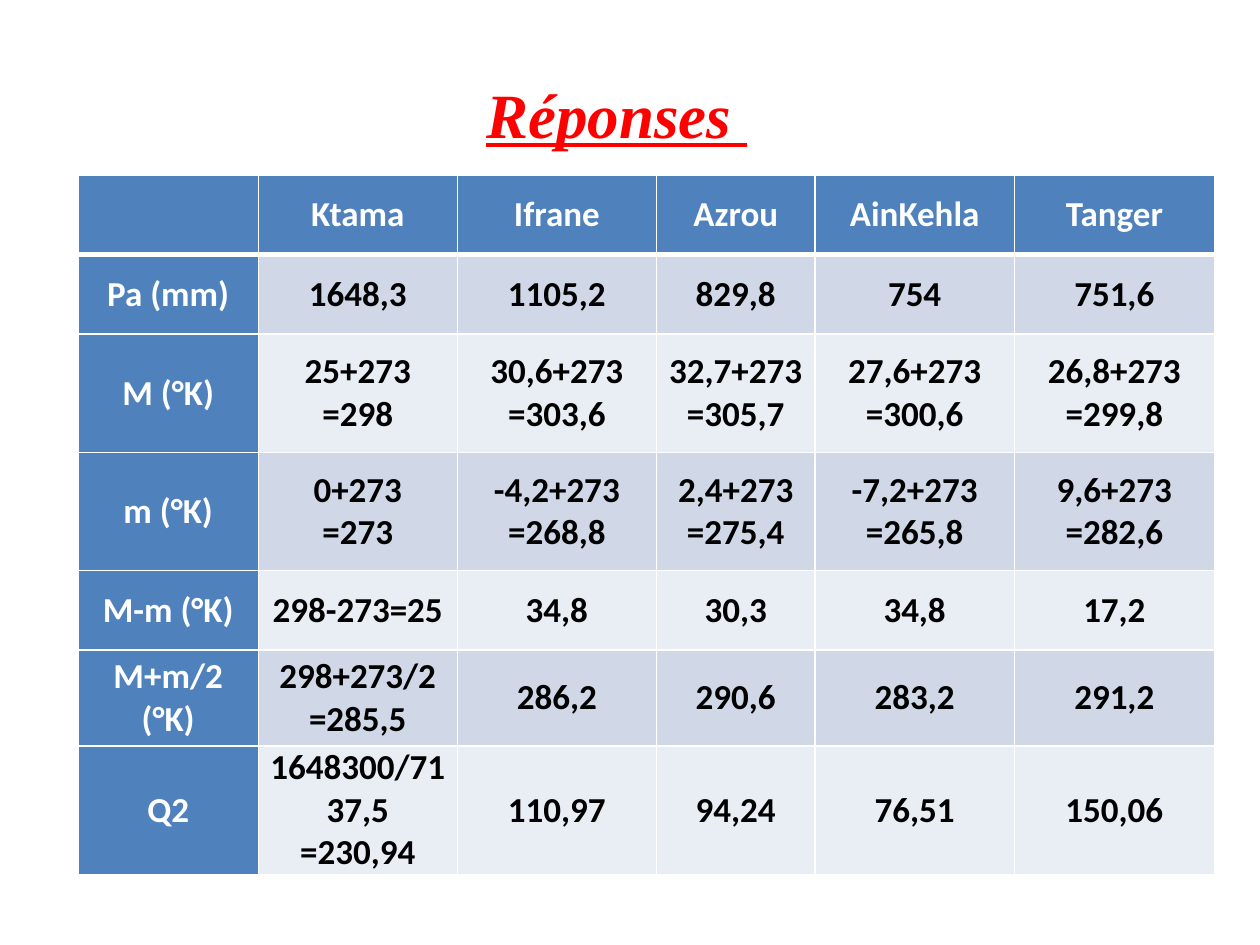
"""Build the slide of answers: a title above a table of climate values."""
from lxml import etree
from pptx import Presentation
from pptx.dml.color import RGBColor
from pptx.enum.text import MSO_ANCHOR, MSO_AUTO_SIZE, PP_ALIGN
from pptx.oxml.ns import qn
from pptx.util import Inches, Pt

MIDDLE = MSO_ANCHOR.MIDDLE
CENTER = PP_ALIGN.CENTER
GROW = MSO_AUTO_SIZE.SHAPE_TO_FIT_TEXT

COLORS = {
    "head": "4F81BD", "odd": "D0D8E8", "even": "E9EDF4",
    "light": "FFFFFF", "dark": "000000", "title": "FF0000",
}
TITLE = "Réponses "
ROWS = [
    ["", "Ktama", "Ifrane", "Azrou", "AinKehla", "Tanger"],
    ["Pa (mm)", "1648,3", "1105,2", "829,8", "754", "751,6"],
    ["M (°K)", "25+273\n=298", "30,6+273\n=303,6", "32,7+273\n=305,7",
     "27,6+273\n=300,6", "26,8+273\n=299,8"],
    ["m (°K)", "0+273\n=273", "-4,2+273\n=268,8", "2,4+273\n=275,4",
     "-7,2+273\n=265,8", "9,6+273\n=282,6"],
    ["M-m (°K)", "298-273=25", "34,8", "30,3", "34,8", "17,2"],
    ["M+m/2 (°K)", "298+273/2\n=285,5", "286,2", "290,6", "283,2", "291,2"],
    ["Q2", "1648300/7137,5\n=230,94", "110,97", "94,24", "76,51", "150,06"],
]
WIDTHS = [1.43, 1.58, 1.58, 1.26, 1.58, 1.59]
HEIGHTS = [0.63, 0.63, 0.94, 0.94, 0.63, 0.76, 0.76]


def color(name):
    return RGBColor.from_string(COLORS[name])


def style(font, face, size, name):
    font.name, font.size, font.bold = face, Pt(size), True
    font.color.rgb = color(name)


def border(cell, row):
    props = cell._tc.get_or_add_tcPr()
    for side in "LRTB":
        thick = (row == 0 and side == "B") or (row == 1 and side == "T")
        line = etree.SubElement(props, qn(f"a:ln{side}"), w=str(Pt(3 if thick else 1)))
        fill = etree.SubElement(line, qn("a:solidFill"))
        etree.SubElement(fill, qn("a:srgbClr"), val=COLORS["light"])


def fill_cell(cell, text, row, col):
    head = row == 0 or col == 0
    border(cell, row)
    cell.fill.solid()
    cell.fill.fore_color.rgb = color("head" if head else "odd" if row % 2 else "even")
    cell.vertical_anchor = MIDDLE
    cell.margin_left = cell.margin_right = Inches(0.07)
    cell.margin_top = cell.margin_bottom = 0
    cell.text_frame.text = text
    for para in cell.text_frame.paragraphs:
        para.alignment = CENTER
        style(para.font, "Calibri", 20, "light" if head else "dark")
        for run in para.runs:
            style(run.font, "Calibri", 20, "light" if head else "dark")


def add_grid(slide):
    frame = slide.shapes.add_table(
        len(ROWS), len(WIDTHS), Inches(0.62), Inches(1.39),
        Inches(sum(WIDTHS)), Inches(sum(HEIGHTS)))
    table = frame.table
    for col, width in zip(table.columns, WIDTHS):
        col.width = Inches(width)
    for row, height in zip(table.rows, HEIGHTS):
        row.height = Inches(height)
    for r, texts in enumerate(ROWS):
        for c, text in enumerate(texts):
            fill_cell(table.cell(r, c), text, r, c)


def add_title(slide):
    box = slide.shapes.add_textbox(Inches(3.27), Inches(0.54), Inches(2.79), Inches(0.71))
    frame = box.text_frame
    frame.text = TITLE
    frame.word_wrap = False
    frame.auto_size = GROW
    frame.vertical_anchor = MIDDLE
    para = frame.paragraphs[0]
    para._p.get_or_add_pPr().set("indent", str(Inches(0.49)))
    font = para.runs[0].font
    style(font, "Times New Roman", 36, "title")
    font.italic = font.underline = True


def main():
    deck = Presentation()
    deck.slide_width, deck.slide_height = Inches(10), Inches(7.5)
    slide = deck.slides.add_slide(deck.slide_layouts[6])
    add_grid(slide)
    add_title(slide)
    deck.save("out.pptx")


if __name__ == "__main__":
    main()
